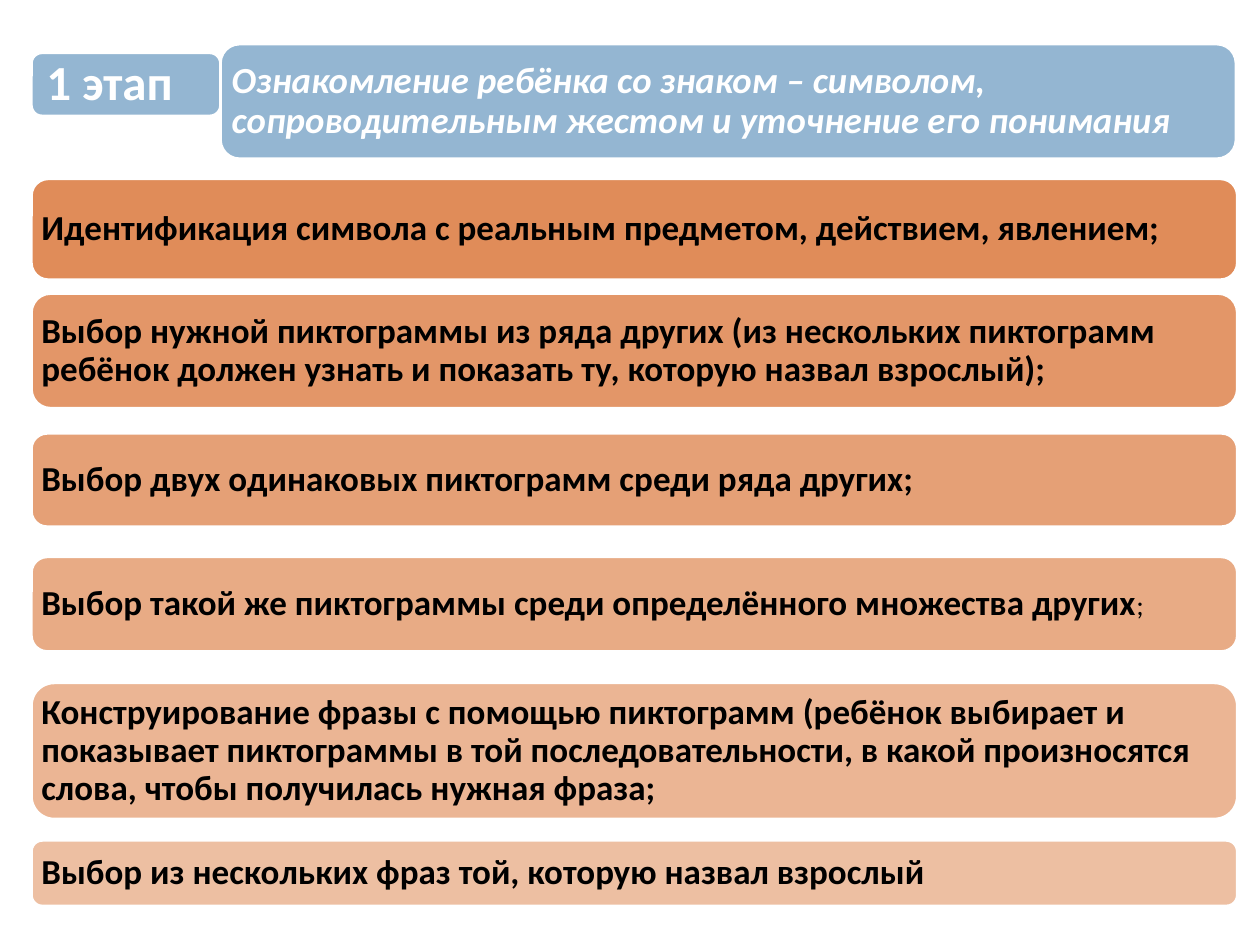
from dataclasses import dataclass

from lxml import etree
from pptx import Presentation, util as u
from pptx.dml.color import RGBColor
from pptx.enum import shapes, text
from pptx.oxml.ns import qn


@dataclass(frozen=True)
class Theme:
    font: str = "Calibri"
    blue: str = "94B6D2"
    orange: str = "DD8047"
    white: str = "FFFFFF"
    black: str = "000000"
    stage_size: int = 28
    title_size: int = 21
    step_size: int = 20
    mark_size: int = 16


theme = Theme()
CORNER_INSET = 0.05


def add_text(p, words, *, size, color, bold=True, italic=False):
    r = p.add_run()
    r.text = words
    r.font.name = theme.font
    r.font.size = u.Pt(size)
    r.font.bold = bold
    r.font.italic = italic
    r.font.color.rgb = RGBColor.from_string(color)


def add_bar(s, left, top, width, height, *, fill, margin, opacity=100):
    sp = s.shapes.add_shape(
        shapes.MSO_SHAPE.ROUNDED_RECTANGLE,
        u.Inches(left), u.Inches(top), u.Inches(width), u.Inches(height),
    )
    sp.shadow.inherit = False
    sp.fill.solid()
    sp.fill.fore_color.rgb = RGBColor.from_string(fill)
    if opacity < 100:
        color = sp.fill._xPr.find(qn("a:solidFill"))[0]
        etree.SubElement(color, qn("a:alpha"), val=str(opacity * 1000))
    sp.line.color.rgb = RGBColor.from_string(theme.white)
    sp.line.width = u.Pt(1.5)
    tf = sp.text_frame
    tf.word_wrap = True
    tf.vertical_anchor = text.MSO_ANCHOR.MIDDLE
    inset = u.Inches(margin - CORNER_INSET * height)
    tf.margin_left = tf.margin_right = tf.margin_top = tf.margin_bottom = inset
    p = tf.paragraphs[0]
    p.alignment = text.PP_ALIGN.LEFT
    p.line_spacing = 0.9
    return p


prs = Presentation()
prs.slide_width = u.Inches(10)
prs.slide_height = u.Inches(7.5)
s = prs.slides.add_slide(prs.slide_layouts[6])

steps = [
    (1.42, 0.8, "Идентификация символа с реальным предметом, действием, явлением;", ""),
    (2.33, 0.91, "Выбор нужной пиктограммы из ряда других (из нескольких пиктограмм "
     "ребёнок должен узнать и показать ту, которую назвал взрослый);", ""),
    (3.44, 0.74, "Выбор двух одинаковых пиктограмм среди ряда других;", ""),
    (4.42, 0.75, "Выбор такой же пиктограммы среди определённого множества других", ";"),
    (5.42, 1.08, "Конструирование фразы с помощью пиктограмм (ребёнок выбирает и "
     "показывает пиктограммы в той последовательности, в какой произносятся "
     "слова, чтобы получилась нужная фраза;", ""),
    (6.67, 0.52, "Выбор из нескольких фраз той, которую назвал взрослый", ""),
]
for i, (top, height, words, mark) in enumerate(steps):
    p = add_bar(s, 0.25, top, 9.57, height, fill=theme.orange, margin=0.08,
                opacity=90 - 8 * i)
    add_text(p, words, size=theme.step_size, color=theme.black)
    if mark:
        add_text(p, mark, size=theme.mark_size, color=theme.black, bold=False)

p = add_bar(s, 0.25, 0.42, 1.5, 0.5, fill=theme.blue, margin=0.12)
add_text(p, "1 этап", size=theme.stage_size, color=theme.white)

p = add_bar(s, 1.75, 0.35, 8.06, 0.91, fill=theme.blue, margin=0.09)
add_text(p, "Ознакомление ребёнка со знаком – символом, "
         "сопроводительным жестом и уточнение его понимания",
         size=theme.title_size, color=theme.white, italic=True)

prs.save("out.pptx")
